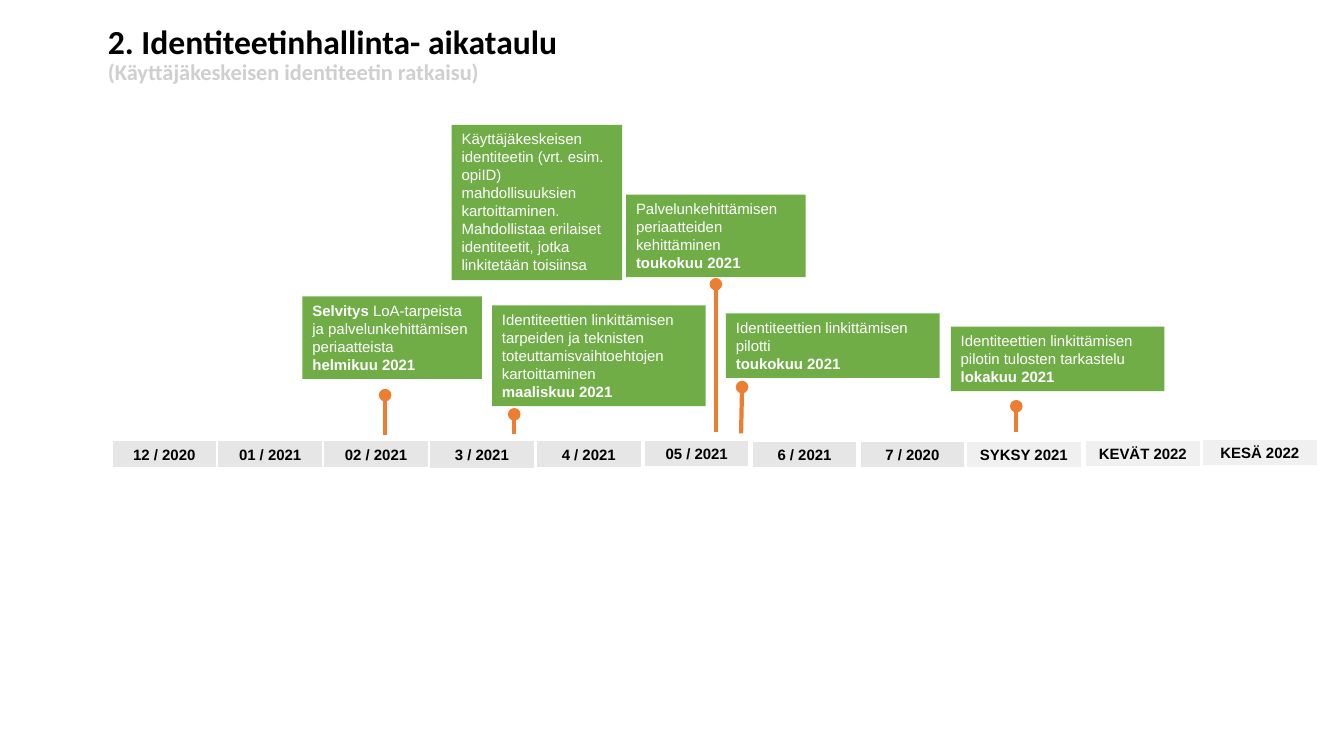
import pptx
import pptx.util
import pptx.dml.color
import pptx.enum.shapes
import pptx.enum.text
import pptx.oxml.ns
from lxml import etree

Inches = pptx.util.Inches
RGBColor = pptx.dml.color.RGBColor
Align = pptx.enum.text.PP_ALIGN
Anchor = pptx.enum.text.MSO_ANCHOR
AutoSize = pptx.enum.text.MSO_AUTO_SIZE

BLACK = RGBColor(0x00, 0x00, 0x00)
WHITE = RGBColor(0xFF, 0xFF, 0xFF)
SUBTITLE_GRAY = RGBColor(0xD0, 0xCE, 0xCE)
MONTH_GRAY = RGBColor(0xE7, 0xE6, 0xE6)
SEASON_GRAY = RGBColor(0xF1, 0xF0, 0xF0)
GREEN = RGBColor(0x70, 0xAD, 0x47)
ORANGE = RGBColor(0xED, 0x7D, 0x31)

# Timeline periods: label, left, top, height
MONTHS = [
    ("12 / 2020", 1.11, 4.37, 0.27), ("01 / 2021", 2.16, 4.37, 0.27),
    ("02 / 2021", 3.21, 4.37, 0.27), ("3 / 2021", 4.26, 4.37, 0.28),
    ("4 / 2021", 5.32, 4.37, 0.27), ("05 / 2021", 6.39, 4.37, 0.26),
    ("6 / 2021", 7.46, 4.38, 0.26), ("7 / 2020", 8.53, 4.38, 0.26),
]
SEASONS = [
    ("SYKSY 2021", 9.58, 4.38, 0.26), ("KEVÄT 2022", 10.76, 4.37, 0.26),
    ("KESÄ 2022", 11.92, 4.36, 0.26),
]

# Stems: dotted end, then the end at the timeline
STEMS = [
    (5.1, 4.11, 5.1, 4.31), (7.36, 3.84, 7.35, 4.3), (10.08, 4.03, 10.08, 4.29),
    (3.82, 3.92, 3.82, 4.32), (7.1, 2.82, 7.1, 4.29),
]

# Milestones: left, top, width, height, paragraphs of (text, bold) runs
MILESTONES = [
    (4.88, 3.03, 2.12, 1.0, [
        [("Identiteettien linkittämisen tarpeiden ja teknisten "
          "toteuttamisvaihtoehtojen kartoittaminen", False)],
        [("maaliskuu 2021", True)]]),
    (3.0, 2.94, 1.78, 0.82, [
        [("Selvitys ", True), ("LoA-tarpeista", False)],
        [("ja palvelunkehittämisen periaatteista", False)],
        [("helmikuu 2021", True)]]),
    (7.2, 3.11, 2.12, 0.64, [
        [("Identiteettien linkittämisen pilotti", False)],
        [("toukokuu 2021", True)]]),
    (6.21, 1.93, 1.78, 0.82, [
        [("Palvelunkehittämisen periaatteiden kehittäminen", False)],
        [("toukokuu 2021", True)]]),
    (9.43, 3.24, 2.12, 0.64, [
        [("Identiteettien linkittämisen pilotin tulosten tarkastelu", False)],
        [("lokakuu 2021", True)]]),
    (4.48, 1.24, 1.69, 1.54, [
        [("Käyttäjäkeskeisen identiteetin (vrt. esim. opiID) mahdollisuuksien "
          "kartoittaminen. Mahdollistaa erilaiset identiteetit, jotka "
          "linkitetään toisiinsa", False)]]),
]


def add_run(paragraph, text, *, font="Arial", size=10.7, color=BLACK, bold=False):
    run = paragraph.add_run()
    run.text = text
    run.font.name = font
    run.font.size = pptx.util.Pt(size)
    run.font.color.rgb = color
    run.font.bold = bold


class TimelineSlide:
    def __init__(self, presentation):
        self.slide = presentation.slides.add_slide(presentation.slide_layouts[5])

    def title(self, heading, subtitle):
        shape = self.slide.shapes.title
        shape.left, shape.top = Inches(0.97), Inches(0.2)
        shape.width, shape.height = Inches(5.44), Inches(1.13)
        frame = shape.text_frame
        frame.word_wrap = True
        frame.auto_size = AutoSize.NONE
        frame.vertical_anchor = Anchor.TOP
        paragraph = frame.paragraphs[0]
        paragraph.alignment = Align.LEFT
        paragraph.line_spacing = 0.9
        add_run(paragraph, heading, font="Calibri", size=24, bold=True)
        paragraph.add_line_break()
        add_run(paragraph, subtitle, font="Calibri", size=16,
                color=SUBTITLE_GRAY, bold=True)

    def box(self, left, top, width, height, fill):
        shape = self.slide.shapes.add_shape(
            pptx.enum.shapes.MSO_SHAPE.RECTANGLE,
            Inches(left), Inches(top), Inches(width), Inches(height))
        shape.shadow.inherit = False
        shape.fill.solid()
        shape.fill.fore_color.rgb = fill
        shape.text_frame.word_wrap = True
        return shape

    def period(self, label, left, top, width, height, fill):
        shape = self.box(left, top, width, height, fill)
        shape.line.color.rgb = WHITE
        shape.line.width = pptx.util.Pt(1)
        shape.text_frame.vertical_anchor = Anchor.MIDDLE
        paragraph = shape.text_frame.paragraphs[0]
        paragraph.alignment = Align.CENTER
        add_run(paragraph, label, bold=True)

    def milestone(self, left, top, width, height, lines):
        shape = self.box(left, top, width, height, GREEN)
        shape.line.fill.background()
        frame = shape.text_frame
        frame.vertical_anchor = Anchor.TOP
        frame.auto_size = AutoSize.SHAPE_TO_FIT_TEXT
        for index, runs in enumerate(lines):
            paragraph = frame.add_paragraph() if index else frame.paragraphs[0]
            paragraph.alignment = Align.LEFT
            for text, bold in runs:
                add_run(paragraph, text, color=WHITE, bold=bold)

    def stem(self, *ends):
        connector = self.slide.shapes.add_connector(
            pptx.enum.shapes.MSO_CONNECTOR.STRAIGHT, *map(Inches, ends))
        connector.line.color.rgb = ORANGE
        connector.line.width = pptx.util.Pt(3)
        qn = pptx.oxml.ns.qn
        properties = connector.line._get_or_add_ln()
        etree.SubElement(properties, qn("a:headEnd")).set("type", "oval")
        etree.SubElement(properties.getparent(), qn("a:effectLst"))


def main():
    presentation = pptx.Presentation()
    presentation.slide_width = Inches(13.33)
    presentation.slide_height = Inches(7.5)
    timeline = TimelineSlide(presentation)

    # Title
    timeline.title("2. Identiteetinhallinta- aikataulu",
                   "(Käyttäjäkeskeisen identiteetin ratkaisu)")

    # Timeline band
    for periods, width, fill in ((MONTHS, 1.04, MONTH_GRAY),
                                 (SEASONS, 1.15, SEASON_GRAY)):
        for label, left, top, height in periods:
            timeline.period(label, left, top, width, height, fill)

    # Stems and milestones
    for ends in STEMS:
        timeline.stem(*ends)
    for milestone in MILESTONES:
        timeline.milestone(*milestone)

    presentation.save("out.pptx")


if __name__ == "__main__":
    main()
